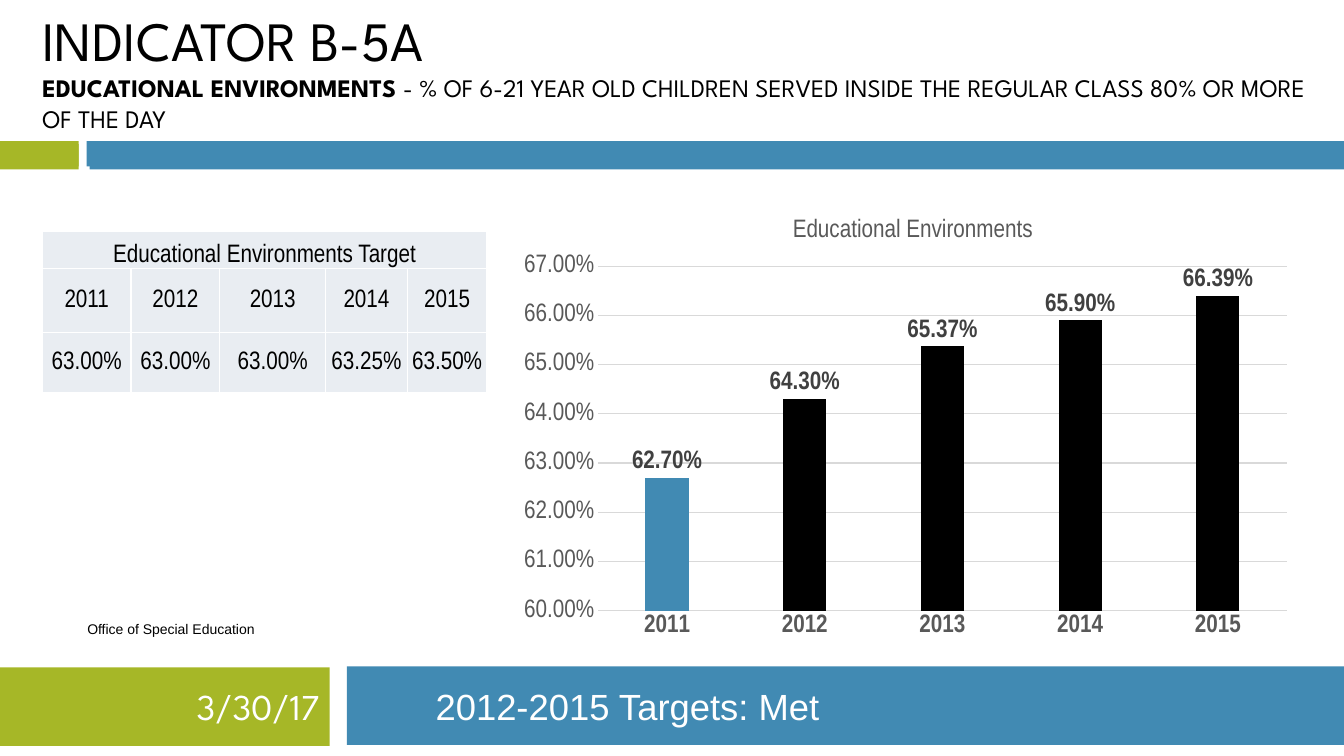
from lxml.etree import SubElement
from pptx import Presentation
from pptx.chart.data import CategoryChartData
from pptx.dml.color import RGBColor
from pptx.enum.chart import XL_CHART_TYPE, XL_LABEL_POSITION, XL_TICK_MARK
from pptx.enum.shapes import MSO_SHAPE
from pptx.enum.text import MSO_ANCHOR, PP_ALIGN
from pptx.oxml import parse_xml
from pptx.oxml.ns import nsdecls, qn
from pptx.util import Pt

PX = 9144  # 100 px to the inch
BLUE = RGBColor(0x41, 0x8A, 0xB3)
GREEN = RGBColor(0xA6, 0xB7, 0x27)
BLACK = RGBColor(0, 0, 0)
WHITE = RGBColor(0xFF, 0xFF, 0xFF)
CELL = RGBColor(0xE9, 0xED, 0xF2)
GRID = RGBColor(0xD9, 0xD9, 0xD9)
AXIS_TEXT = RGBColor(0x59, 0x59, 0x59)
LABEL_TEXT = RGBColor(0x40, 0x40, 0x40)
DISPLAY, SANS, NARROW = "League Spartan", "Arial", "Arial Narrow"

BARS = [
    (86, 140, 1247, 25, BLUE),
    (0, 140, 78, 25, GREEN),
    (89, 143, 1244, 25, BLUE),
    (0, 143, 78, 25, GREEN),
    (-1, 662, 328, 78, GREEN),
    (344, 661, 989, 78, BLUE),
]
TITLE = [
    ("INDICATOR B-5A", 39.6, False),
    ("EDUCATIONAL ENVIRONMENTS ", 18, True),
    ("- % OF 6-21 YEAR OLD CHILDREN SERVED INSIDE THE REGULAR CLASS "
     "80% OR MORE OF THE DAY", 18, False),
]
# text, frame, left and right inset, alignment, size, font, colour
LINES = [
    ("Office of Special Education", (48, 612, 243, 24), (0, 0), PP_ALIGN.CENTER, 10, SANS, BLACK),
    ("3/30/17", (-1, 662, 328, 77), (7, 10), PP_ALIGN.RIGHT, 26, DISPLAY, WHITE),
    ("2012-2015 Targets: Met", (425, 662, 417, 77), (7, 10), PP_ALIGN.LEFT, 26, SANS, WHITE),
]
YEARS = ["2011", "2012", "2013", "2014", "2015"]
TARGETS = ["63.00%", "63.00%", "63.00%", "63.25%", "63.50%"]
TARGET_HEADING = "Educational Environments Target"
TABLE_FRAME = (42, 230, 442, 160)
COLUMN_WIDTHS = [88, 88, 105, 81, 79]
ROW_HEIGHTS = [36, 64, 60]
CHART_TITLE = "Educational Environments"
CHART_FRAME = (507, 192, 785, 450)
RESULTS = [0.627, 0.643, 0.6537, 0.659, 0.6639]


def scaled(frame):
    return [length * PX for length in frame]


def style(font, size, name, colour, bold=False):
    font.size, font.name, font.bold = Pt(size), name, bold
    font.color.rgb = colour


def add_text_box(page, frame, insets, anchor):
    text = page.shapes.add_textbox(*scaled(frame)).text_frame
    text.word_wrap = True
    text.vertical_anchor = anchor
    text.margin_left, text.margin_right = scaled(insets)
    text.margin_top = text.margin_bottom = 0
    return text


def add_bars(page):
    for *frame, colour in BARS:
        bar = page.shapes.add_shape(MSO_SHAPE.RECTANGLE, *scaled(frame))
        bar.shadow.inherit = False
        bar.fill.solid()
        bar.fill.fore_color.rgb = colour
        bar.line.fill.background()


def add_texts(page):
    para = add_text_box(page, (42, 17, 1267, 115), (0, 0), MSO_ANCHOR.BOTTOM).paragraphs[0]
    for index, (words, size, bold) in enumerate(TITLE):
        if index == 1:
            para.add_line_break()
        span = para.add_run()
        span.text = words
        style(span.font, size, DISPLAY, BLACK, bold)
    for words, frame, insets, align, size, name, colour in LINES:
        para = add_text_box(page, frame, insets, MSO_ANCHOR.MIDDLE).paragraphs[0]
        para.text = words
        para.alignment = align
        style(para.font, size, name, colour)


def add_cell_borders(cell):
    properties = cell._tc.get_or_add_tcPr()
    for index, side in enumerate(("lnL", "lnR", "lnT", "lnB")):
        properties.insert(index, parse_xml(
            f'<a:{side} {nsdecls("a")} w="12700"><a:solidFill>'
            f'<a:srgbClr val="{WHITE}"/></a:solidFill></a:{side}>'))


def add_target_table(page):
    rows = [[TARGET_HEADING] + [""] * (len(YEARS) - 1), YEARS, TARGETS]
    table = page.shapes.add_table(len(rows), len(YEARS), *scaled(TABLE_FRAME)).table
    for column, width in zip(table.columns, COLUMN_WIDTHS):
        column.width = width * PX
    for row, height in zip(table.rows, ROW_HEIGHTS):
        row.height = height * PX
    table.cell(0, 0).merge(table.cell(0, len(YEARS) - 1))
    for row_index, row in enumerate(rows):
        for column_index, words in enumerate(row):
            cell = table.cell(row_index, column_index)
            cell.fill.solid()
            cell.fill.fore_color.rgb = CELL
            cell.margin_left = cell.margin_right = cell.margin_top = PX
            cell.margin_bottom = 0
            cell.vertical_anchor = MSO_ANCHOR.MIDDLE if row_index else MSO_ANCHOR.BOTTOM
            add_cell_borders(cell)
            para = cell.text_frame.paragraphs[0]
            para.text = words
            para.alignment = PP_ALIGN.CENTER
            style(para.font, 18, NARROW, BLACK)


def place(element, position, **values):
    """Give a chart part a manual layout, in fractions of the chart."""
    for old in element.findall(qn("c:layout")):
        element.remove(old)
    layout = parse_xml(f'<c:layout {nsdecls("c")}><c:manualLayout/></c:layout>')
    for name, value in values.items():
        SubElement(layout[0], qn(f"c:{name}")).set("val", str(value))
    element.insert(position, layout)


def add_results_chart(page):
    data = CategoryChartData(number_format="0.00%")
    data.categories = YEARS
    data.add_series("Series 1", RESULTS)
    chart = page.shapes.add_chart(
        XL_CHART_TYPE.COLUMN_CLUSTERED, *scaled(CHART_FRAME), data).chart
    style(chart.font, 10, DISPLAY, BLACK)
    chart.has_legend = False
    chart.has_title = True
    para = chart.chart_title.text_frame.paragraphs[0]
    para.text = CHART_TITLE
    style(para.font, 18, NARROW, AXIS_TEXT)
    place(chart.chart_title._element, 1, xMode="edge", yMode="edge", x=0.35, y=0.04)
    place(chart._chartSpace.chart.plotArea, 0, layoutTarget="inner",
          xMode="edge", yMode="edge", x=0.11, y=0.16, w=0.87, h=0.76)

    years, percents = chart.category_axis, chart.value_axis
    for axis in (years, percents):
        axis.major_tick_mark = axis.minor_tick_mark = XL_TICK_MARK.NONE
        style(axis.tick_labels.font, 18, NARROW, AXIS_TEXT, axis is years)
    percents.minimum_scale, percents.maximum_scale, percents.major_unit = 0.6, 0.67, 0.01
    percents.tick_labels.number_format = "0.00%"
    percents.tick_labels.number_format_is_linked = False
    percents.format.line.fill.background()
    for line in (years.format.line, percents.major_gridlines.format.line):
        line.color.rgb = GRID
        line.width = Pt(0.75)

    plot = chart.plots[0]
    plot.vary_by_categories = False
    plot.gap_width, plot.overlap = 219, -27
    series = plot.series[0]
    for index in range(len(YEARS)):
        fill = series.points[index].format.fill
        fill.solid()
        fill.fore_color.rgb = BLACK if index else BLUE
    labels = series.data_labels
    labels.show_value = True
    labels.position = XL_LABEL_POSITION.OUTSIDE_END
    style(labels.font, 18, NARROW, LABEL_TEXT, True)


def main():
    deck = Presentation()
    deck.slide_width, deck.slide_height = scaled((1333, 750))
    page = deck.slides.add_slide(deck.slide_layouts[6])
    add_bars(page)
    add_texts(page)
    add_target_table(page)
    add_results_chart(page)
    deck.save("out.pptx")


if __name__ == "__main__":
    main()
